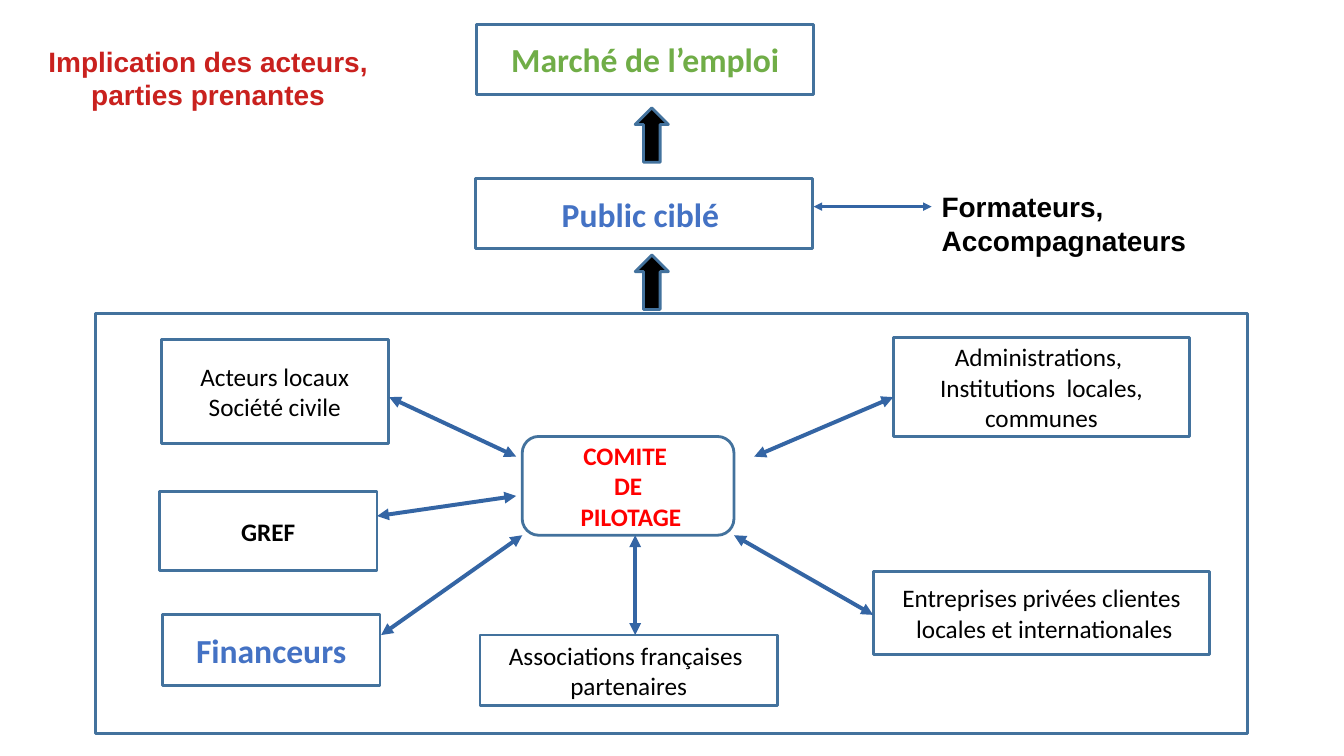
from lxml import etree
from pptx import Presentation
from pptx.dml.color import RGBColor
from pptx.enum.shapes import MSO_CONNECTOR, MSO_SHAPE
from pptx.enum.text import MSO_ANCHOR, PP_ALIGN
from pptx.oxml.ns import qn
from pptx.util import Inches, Pt

WHITE = RGBColor(0xFF, 0xFF, 0xFF)
BLACK = RGBColor(0x00, 0x00, 0x00)
BORDER = RGBColor(0x43, 0x72, 0x9D)
LINK = RGBColor(0x34, 0x65, 0xA4)
GREEN = RGBColor(0x70, 0xAD, 0x47)
BLUE = RGBColor(0x44, 0x72, 0xC4)
RED = RGBColor(0xFF, 0x00, 0x00)
TITLE_RED = RGBColor(0xC9, 0x21, 0x1E)


class Diagram:
    """Draws styled elements on one slide."""

    def __init__(self, slide):
        self.shapes = slide.shapes

    def set_text(self, frame, lines, size, color, bold, font, align):
        frame.word_wrap = True
        frame.text = "\n".join(lines)
        for paragraph in frame.paragraphs:
            paragraph.alignment = align
            for run in paragraph.runs:
                run.font.name = font
                run.font.size = Pt(size)
                run.font.bold = bold
                run.font.color.rgb = color

    def box(self, at, lines=(), size=18, color=BLACK, bold=False,
            kind=MSO_SHAPE.RECTANGLE, fill=WHITE, border=2):
        shape = self.shapes.add_shape(kind, *map(Inches, at))
        shape.shadow.inherit = False
        shape.fill.solid()
        shape.fill.fore_color.rgb = fill
        shape.line.color.rgb = BORDER
        shape.line.width = Pt(border)
        if lines:
            shape.text_frame.vertical_anchor = MSO_ANCHOR.MIDDLE
            self.set_text(shape.text_frame, lines, size, color, bold,
                          "Calibri", PP_ALIGN.CENTER)

    def label(self, at, lines, color, align):
        frame = self.shapes.add_textbox(*map(Inches, at)).text_frame
        self.set_text(frame, lines, 20, color, True, "Arial", align)

    def up_arrow(self, top):
        self.box((6.3, top, 0.33, 0.54), kind=MSO_SHAPE.UP_ARROW, fill=BLACK)

    def link(self, start, end, width=2.83):
        connector = self.shapes.add_connector(
            MSO_CONNECTOR.STRAIGHT, *map(Inches, start + end))
        connector.line.color.rgb = LINK
        connector.line.width = Pt(width)
        properties = connector._element.spPr
        outline = properties.find(qn("a:ln"))
        for end_tag in ("a:headEnd", "a:tailEnd"):
            etree.SubElement(outline, qn(end_tag), type="triangle")
        etree.SubElement(properties, qn("a:effectLst"))


def main():
    deck = Presentation()
    deck.slide_width, deck.slide_height = Inches(13.33), Inches(7.5)
    diagram = Diagram(deck.slides.add_slide(deck.slide_layouts[6]))

    # Frame around the partners
    diagram.box((0.95, 3.11, 11.42, 4.17), border=2.25)

    # Path from the partners to the job market
    diagram.box((4.73, 0.24, 3.34, 0.7), ["Marché de l’emploi"], 24, GREEN, True)
    diagram.box((4.72, 1.77, 3.34, 0.7), ["Public ciblé "], 24, BLUE, True)
    for top in (1.07, 2.53):
        diagram.up_arrow(top)

    # Title and trainers
    diagram.label((0.2, 0.39, 3.73, 1.27),
                  ["Implication des acteurs,", "parties prenantes"],
                  TITLE_RED, PP_ALIGN.CENTER)
    diagram.label((9.24, 1.83, 3.54, 0.4), ["Formateurs, Accompagnateurs"],
                  BLACK, PP_ALIGN.LEFT)
    diagram.link((9.24, 2.05), (8.07, 2.05), width=0)

    # Partners
    diagram.box((1.6, 3.37, 2.25, 1.03), ["Acteurs locaux", "Société civile"])
    diagram.box((1.58, 4.88, 2.16, 0.78), ["GREF"], bold=True)
    diagram.box((1.61, 6.1, 2.16, 0.7), ["Financeurs"], 24, BLUE, True)
    diagram.box((4.76, 6.3, 2.95, 0.7),
                ["Associations françaises ", "partenaires"])
    diagram.box((8.86, 3.35, 2.94, 0.98),
                ["Administrations, ", "Institutions  locales, communes"])
    diagram.box((8.66, 5.67, 3.34, 0.82),
                ["Entreprises privées clientes", " locales et internationales"])

    # Steering committee and its links
    diagram.box((5.18, 4.33, 2.1, 0.98), ["COMITE ", "DE", " PILOTAGE"],
                color=RED, bold=True,
                kind=MSO_SHAPE.FLOWCHART_ALTERNATE_PROCESS)
    committee_links = [
        ((3.86, 3.94), (5.12, 4.53)),
        ((3.74, 5.12), (5.12, 4.92)),
        ((3.78, 6.3), (5.18, 5.31)),
        ((6.3, 5.31), (6.3, 6.3)),
        ((7.28, 5.31), (8.66, 6.1)),
        ((7.48, 4.53), (8.86, 3.94)),
    ]
    for start, end in committee_links:
        diagram.link(start, end)

    deck.save("out.pptx")


if __name__ == "__main__":
    main()
